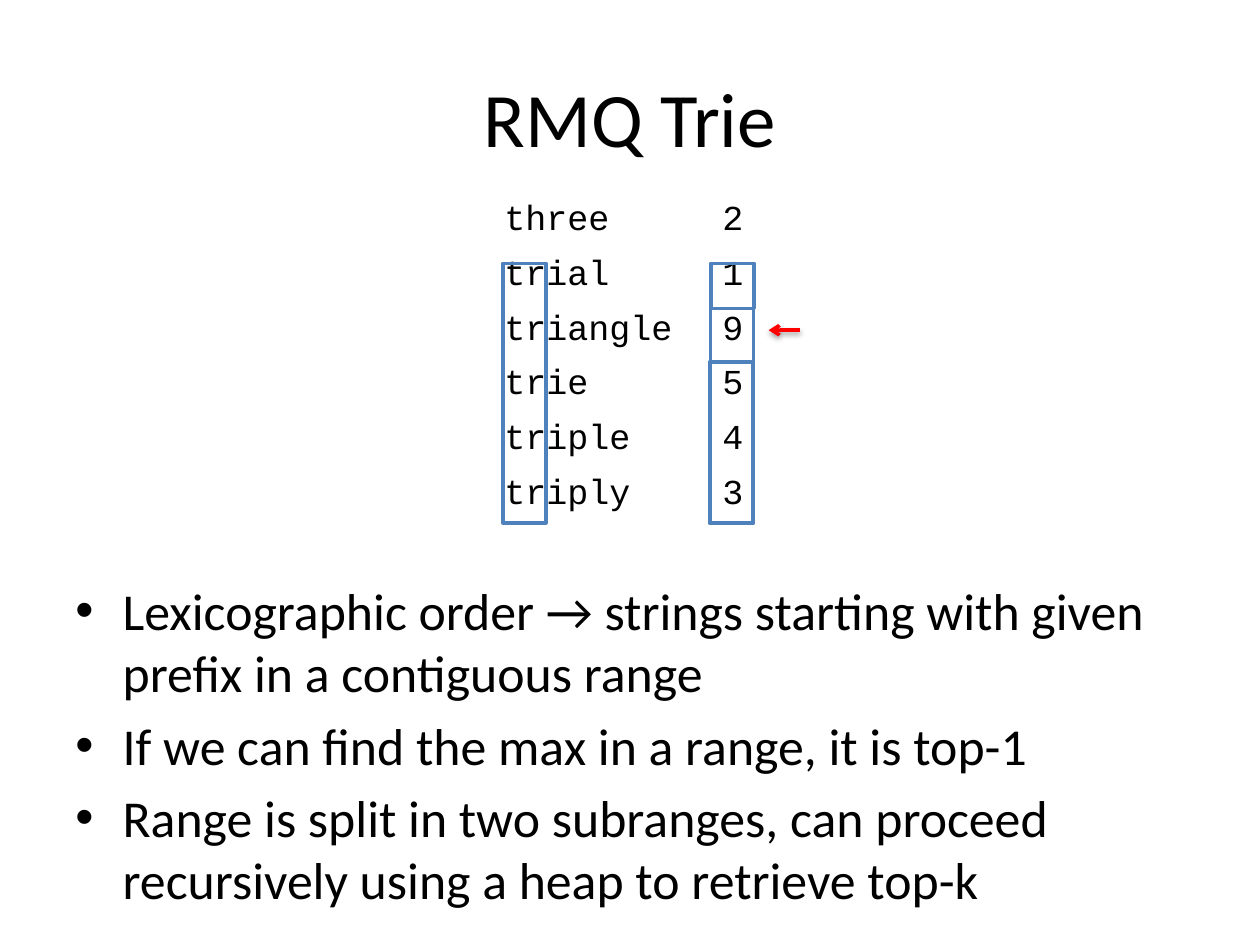
from dataclasses import dataclass

from lxml.etree import SubElement
from pptx import Presentation
from pptx.dml.color import RGBColor
from pptx.enum.shapes import MSO_CONNECTOR, MSO_SHAPE
from pptx.enum.text import MSO_ANCHOR, PP_ALIGN
from pptx.oxml.ns import qn
from pptx.util import Pt


@dataclass(frozen=True)
class Theme:
    text: RGBColor = RGBColor(0, 0, 0)
    frame: RGBColor = RGBColor(0x4F, 0x81, 0xBD)
    arrow: RGBColor = RGBColor(0xFF, 0, 0)
    body_font: str = "Calibri"
    code_font: str = "Courier New"
    title_size: float = 44
    body_size: float = 29.6
    code_size: float = 20
    line: float = 2


THEME = Theme()
ENTRIES = [("three", 2), ("trial", 1), ("triangle", 9),
           ("trie", 5), ("triple", 4), ("triply", 3)]
POINTS = [
    "Lexicographic order → strings starting with given prefix in a contiguous range",
    "If we can find the max in a range, it is top-1",
    "Range is split in two subranges, can proceed recursively using a heap to retrieve top-k",
]


def apply(obj, formats):
    for name, value in formats.items():
        setattr(obj, name, value)


def add_run(p, text, font, size):
    r = p.add_run()
    r.text = text
    apply(r.font, {"name": font, "size": Pt(size)})
    r.font.color.rgb = THEME.text


def add_text(s, box, anchor):
    tf = s.shapes.add_textbox(*map(Pt, box)).text_frame
    apply(tf, {"word_wrap": True, "vertical_anchor": anchor})
    return tf


def add_title(s, box, text):
    p = add_text(s, box, MSO_ANCHOR.MIDDLE).paragraphs[0]
    p.alignment = PP_ALIGN.CENTER
    add_run(p, text, THEME.body_font, THEME.title_size)


def add_points(s, box, points):
    tf = add_text(s, box, MSO_ANCHOR.TOP)
    for i, point in enumerate(points):
        p = tf.add_paragraph() if i else tf.paragraphs[0]
        p.space_before = Pt(6)
        pPr = p._p.get_or_add_pPr()
        pPr.set("marL", str(Pt(27)))
        pPr.set("indent", str(Pt(-27)))
        SubElement(pPr, qn("a:buFont"), typeface="Arial")
        SubElement(pPr, qn("a:buChar"), char="•")
        add_run(p, point, THEME.body_font, THEME.body_size)


def add_entries(s, box, entries):
    left, top, width, height = box
    score_width = 33.4
    table = s.shapes.add_table(len(entries), 2, *map(Pt, box)).table
    apply(table, {"first_row": False, "horz_banding": False})
    for col, w in zip(table.columns, (width - score_width, score_width)):
        col.width = Pt(w)
    for row, entry in zip(table.rows, entries):
        row.height = Pt(height / len(entries))
        for cell, value in zip(row.cells, entry):
            cell.fill.background()
            add_run(cell.text_frame.paragraphs[0], str(value),
                    THEME.code_font, THEME.code_size)


def add_frame(s, box):
    sp = s.shapes.add_shape(MSO_SHAPE.RECTANGLE, *map(Pt, box))
    sp.shadow.inherit = False
    sp.fill.background()
    sp.line.color.rgb = THEME.frame
    sp.line.width = Pt(THEME.line)


def add_max_arrow(s, start, y, end):
    line = s.shapes.add_connector(MSO_CONNECTOR.STRAIGHT, *map(Pt, (start, y, end, y)))
    line.line.color.rgb = THEME.arrow
    line.line.width = Pt(THEME.line)
    SubElement(line.line._get_or_add_ln(), qn("a:tailEnd"), type="arrow")
    effects = SubElement(line._element.spPr, qn("a:effectLst"))
    shadow = SubElement(effects, qn("a:outerShdw"), blurRad=str(Pt(3.1)),
                        dist=str(Pt(1.6)), dir="5400000", rotWithShape="0")
    color = SubElement(shadow, qn("a:srgbClr"), val="000000")
    SubElement(color, qn("a:alpha"), val="38000")


def add_ranges(s, box):
    left, top, width, height = box
    frame_width, score_left, bottom = 24.7, left + 118.6, top + height
    lower_top = top + 56.3
    add_frame(s, (left, top, frame_width, height))
    add_frame(s, (score_left, top, frame_width, height))
    add_max_arrow(s, left + width, top + 38.2, left + width - 18)
    add_frame(s, (score_left - 0.5, lower_top, frame_width, bottom - lower_top))
    add_frame(s, (score_left + 0.4, top, frame_width, 25.7))


def main():
    prs = Presentation()
    apply(prs, {"slide_width": Pt(720), "slide_height": Pt(540)})
    s = prs.slides.add_slide(prs.slide_layouts[6])
    add_title(s, (36, 21.6, 648, 90), "RMQ Trie")
    add_points(s, (36, 327, 648, 186.5), POINTS)
    add_entries(s, (281, 111.6, 158, 180), ENTRIES)
    add_ranges(s, (287.3, 150.5, 169.9, 148.3))
    prs.save("out.pptx")


if __name__ == "__main__":
    main()
